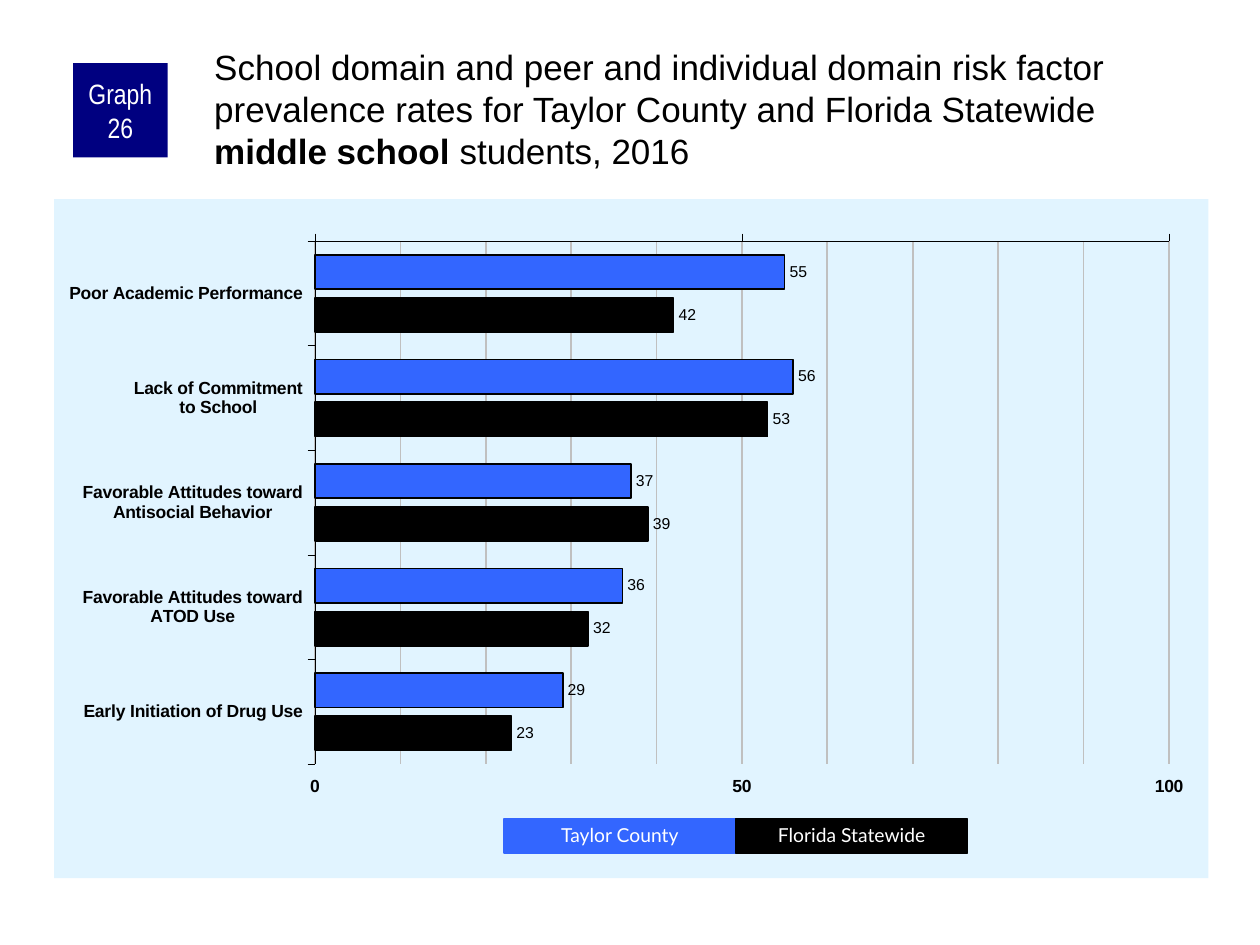
from copy import deepcopy
from lxml.etree import fromstring
from pptx import Presentation
from pptx.chart.data import CategoryChartData as Data
from pptx.dml.color import RGBColor
from pptx.enum.chart import XL_CHART_TYPE as Kind, XL_LABEL_POSITION as Spot
from pptx.enum.chart import XL_TICK_LABEL_POSITION as Side, XL_TICK_MARK as Tick
from pptx.enum.shapes import MSO_SHAPE as Form
from pptx.enum.text import MSO_ANCHOR as Anchor, MSO_AUTO_SIZE as Fit, PP_ALIGN as Align
from pptx.util import Inches, Pt

TITLE = [
    ("School domain and peer and individual domain risk factor prevalence rates "
     "for Taylor County and Florida Statewide ", False),
    ("middle school", True),
    (" students, 2016", False),
]
CATS = [
    "Poor Academic Performance",
    "Lack of Commitment\nto School",
    "Favorable Attitudes toward\nAntisocial Behavior",
    "Favorable Attitudes toward\nATOD Use",
    "Early Initiation of Drug Use",
]
SERIES = [
    ("Taylor County", "3366FF", (55, 56, 37, 36, 29)),
    ("Florida Statewide", "000000", (42, 53, 39, 32, 23)),
]
PLOT = {"x": 0.226, "y": 0.062, "w": 0.74, "h": 0.77}
KEY = (4, 6.5, 1.84, 0.27)
NS = "http://schemas.openxmlformats.org/drawingml/2006/"


def paint(fill, hue):
    fill.solid()
    fill.fore_color.rgb = RGBColor.from_string(hue)


def stroke(line, hue, width):
    paint(line.fill, hue)
    line.width = Pt(width)


def style(font, size, name="Arial", hue="000000", bold=False):
    font.size, font.name, font.bold = Pt(size), name, bold
    font.color.rgb = RGBColor.from_string(hue)


def inset(frame, *gaps):
    sides = ("margin_left", "margin_top", "margin_right", "margin_bottom")
    for side, gap in zip(sides, gaps):
        setattr(frame, side, Inches(gap))


def add_box(slide, box, hue, text, size, name):
    shape = slide.shapes.add_shape(Form.RECTANGLE, *map(Inches, box))
    shape.shadow.inherit = False
    paint(shape.fill, hue)
    shape.line.fill.background()
    frame = shape.text_frame
    frame.word_wrap, frame.vertical_anchor = True, Anchor.MIDDLE
    par = frame.paragraphs[0]
    par.alignment = Align.CENTER
    run = par.add_run()
    run.text = text
    style(run.font, size, name, "FFFFFF")
    return shape


def add_bars(slide):
    data = Data()
    data.categories = CATS
    for name, _, vals in SERIES:
        data.add_series(name, vals)
    box = map(Inches, (0.43, 1.58, 9.16, 5.39))
    chart = slide.shapes.add_chart(Kind.BAR_CLUSTERED, *box, data).chart
    chart.has_legend = chart.has_title = False
    style(chart.font, 11.8)
    plot = chart.plots[0]
    plot.gap_width, plot.overlap, plot.vary_by_categories = 80, -25, False
    for series, (_, hue, _) in zip(plot.series, SERIES):
        paint(series.format.fill, hue)
        stroke(series.format.line, "000000", 1)
        labels = series.data_labels
        labels.show_value, labels.position = True, Spot.OUTSIDE_END
        style(labels.font, 9)

    cat, val = chart.category_axis, chart.value_axis
    for axis in (cat, val):
        axis.major_tick_mark, axis.minor_tick_mark = Tick.OUTSIDE, Tick.NONE
        style(axis.tick_labels.font, 10, bold=True)
        stroke(axis.format.line, "000000", 0.25)
    cat.reverse_order = True
    val.tick_label_position = Side.HIGH
    val.minimum_scale, val.maximum_scale = 0, 100
    val.major_unit, val.minor_unit = 50, 10
    val.has_major_gridlines = val.has_minor_gridlines = True
    stroke(val.major_gridlines.format.line, "C0C0C0", 1)

    root = chart.element if hasattr(chart, "element") else chart._chartSpace
    major = root.xpath("//c:majorGridlines/c:spPr")[0]
    root.xpath("//c:minorGridlines")[0].append(deepcopy(major))
    area = root.xpath("//c:plotArea")[0]
    for old in area.xpath("c:layout"):
        area.remove(old)
    modes = "".join(f'<c:{k}Mode val="edge"/>' for k in "xy")
    sizes = "".join(f'<c:{k} val="{v}"/>' for k, v in PLOT.items())
    area.insert(0, fromstring(
        f'<c:layout xmlns:c="{NS}chart"><c:manualLayout>'
        f'<c:layoutTarget val="inner"/>{modes}{sizes}</c:manualLayout></c:layout>'))
    root.xpath("c:chart")[0].addnext(fromstring(
        f'<c:spPr xmlns:c="{NS}chart" xmlns:a="{NS}main"><a:solidFill>'
        '<a:srgbClr val="E1F4FF"/></a:solidFill><a:ln><a:noFill/></a:ln></c:spPr>'))


def add_title(slide):
    title = slide.shapes.title
    title.left, title.top, title.width, title.height = map(Inches, (1.67, 0.33, 7.92, 0.83))
    frame = title.text_frame
    frame.word_wrap, frame.auto_size = True, Fit.NONE
    frame.vertical_anchor = Anchor.TOP
    inset(frame, 0.03, 0.03, 0, 0)
    par = frame.paragraphs[0]
    par.alignment = Align.LEFT
    for text, bold in TITLE:
        run = par.add_run()
        run.text = text
        style(run.font, 20, bold=bold)


def main():
    prs = Presentation()
    prs.slide_width, prs.slide_height = Inches(10), Inches(7.5)
    slide = prs.slides.add_slide(prs.slide_layouts[5])
    add_bars(slide)
    badge = add_box(slide, (0.58, 0.5, 0.75, 0.75), "000080", "Graph 26", 16, "Arial Narrow")
    inset(badge.text_frame, 0.05, 0, 0.05, 0)
    add_title(slide)
    left, top, wide, high = KEY
    for i, (name, hue, _) in enumerate(SERIES):
        key = add_box(slide, (left + i * wide, top, wide, high), hue, name, 11, "Lato")
        stroke(key.line, hue, 0.75)
        key.text_frame.auto_size = Fit.SHAPE_TO_FIT_TEXT
        key.text_frame.paragraphs[0].line_spacing = 0.9
    prs.save("out.pptx")


if __name__ == "__main__":
    main()
